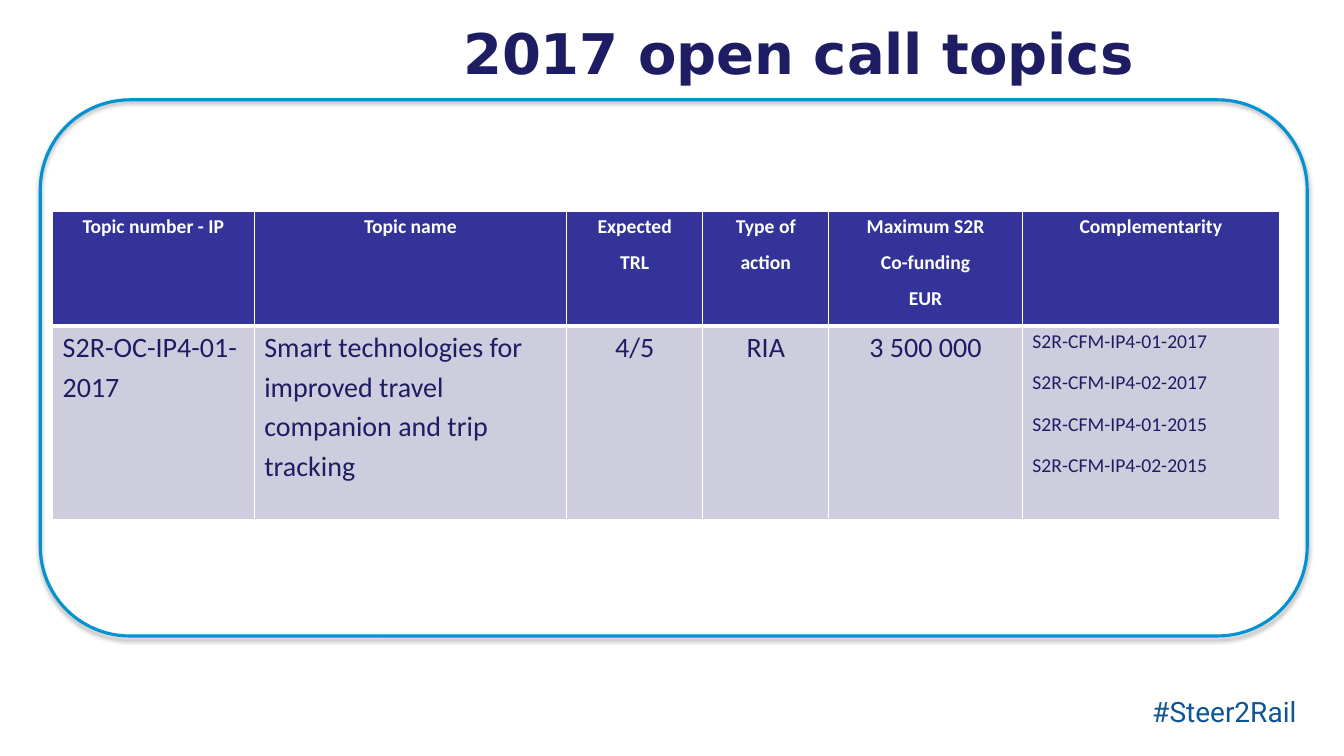
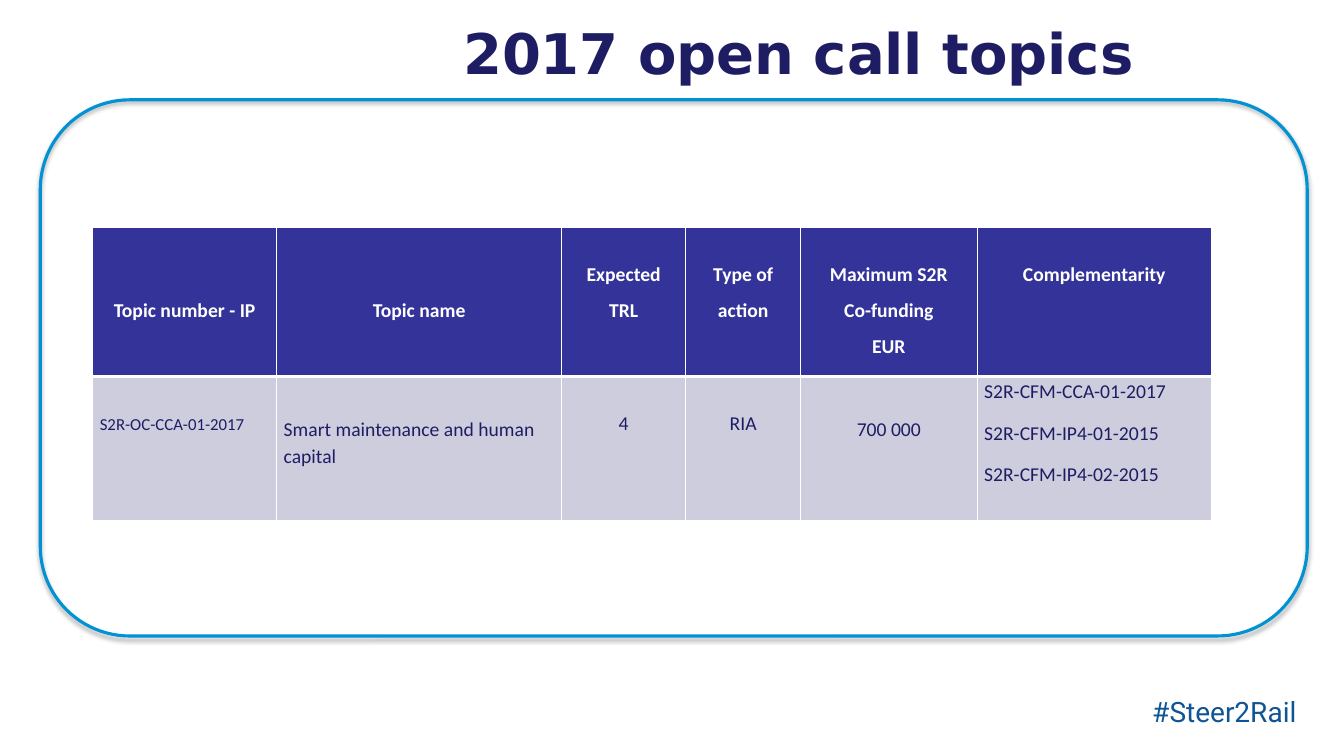
from dataclasses import dataclass
from lxml import etree
from pptx import Presentation
from pptx.dml.color import RGBColor
from pptx.enum.shapes import MSO_SHAPE
from pptx.enum.text import MSO_ANCHOR, MSO_AUTO_SIZE, PP_ALIGN
from pptx.oxml.ns import qn
from pptx.util import Pt

ROUNDED = MSO_SHAPE.ROUNDED_RECTANGLE
TOP = MSO_ANCHOR.TOP
NO_AUTOSIZE = MSO_AUTO_SIZE.NONE
LEFT, CENTER, RIGHT = PP_ALIGN.LEFT, PP_ALIGN.CENTER, PP_ALIGN.RIGHT
TITLE_ONLY = 5


@dataclass(frozen=True)
class Theme:
    navy: str = "1E1D64"
    frame: str = "0092D2"
    tag: str = "0F5494"
    header: str = "333399"
    body: str = "CDCDDE"
    white: str = "FFFFFF"
    shadow: str = "000000"
    title_font: str = "DejaVu Sans"
    table_font: str = "Calibri"
    tag_font: str = "Roboto"
    title_size: int = 40
    large: int = 20
    medium: int = 14
    small: int = 12


THEME = Theme()


@dataclass
class Entry:
    """Lines of one table cell, with their size and the gap above them."""
    lines: list
    align: PP_ALIGN = CENTER
    size: int = THEME.medium
    top: float = 0


class Deck:
    def __init__(self):
        self.presentation = Presentation()
        self.presentation.slide_width = Pt(960)
        self.presentation.slide_height = Pt(540)
        self.slide = None

    def new_slide(self, title):
        layout = self.presentation.slide_layouts[TITLE_ONLY]
        self.slide = self.presentation.slides.add_slide(layout)
        self.hashtag("#Steer2Rail")
        self.frame()
        self.title(title)

    def fill_text(self, text_frame, lines, align, color, spacing=None, **font_values):
        for index, line in enumerate(lines):
            paragraph = text_frame.paragraphs[0] if index == 0 else text_frame.add_paragraph()
            paragraph.alignment = align
            for name, value in (spacing or {}).items():
                setattr(paragraph, name, value)
            run = paragraph.add_run()
            run.text = line
            for name, value in font_values.items():
                setattr(run.font, name, value)
            run.font.color.rgb = RGBColor.from_string(color)

    def title(self, text):
        shape = self.slide.shapes.title
        shape.left, shape.top, shape.width, shape.height = Pt(219), Pt(9.4), Pt(598), Pt(55.4)
        text_frame = shape.text_frame
        text_frame.auto_size = NO_AUTOSIZE
        text_frame.vertical_anchor = TOP
        self.fill_text(text_frame, [text], RIGHT, THEME.navy, name=THEME.title_font,
                       size=Pt(THEME.title_size), bold=True)

    def hashtag(self, text):
        shape = self.slide.shapes.add_textbox(Pt(800.8), Pt(492.5), Pt(132.4), Pt(31.5))
        shape.text_frame.word_wrap = True
        self.fill_text(shape.text_frame, [text], RIGHT, THEME.tag,
                       name=THEME.tag_font, size=Pt(THEME.large))

    def frame(self):
        shape = self.slide.shapes.add_shape(ROUNDED, Pt(28.8), Pt(71.3), Pt(905), Pt(383))
        shape.adjustments[0] = 0.167
        shape.fill.background()
        shape.line.color.rgb = RGBColor.from_string(THEME.frame)
        shape.line.width = Pt(2.25)
        # Soft shadow straight below the outline
        shape.shadow.inherit = False
        effects = shape._element.spPr.find(qn("a:effectLst"))
        shadow = etree.SubElement(effects, qn("a:outerShdw"), blurRad=str(Pt(3.1)),
                                  dist=str(Pt(1.8)), dir="5400000", rotWithShape="0")
        color = etree.SubElement(shadow, qn("a:srgbClr"), val=THEME.shadow)
        etree.SubElement(color, qn("a:alpha"), val="35000")

    def borders(self, cell, top, bottom):
        properties = cell._tc.get_or_add_tcPr()
        for side, width in (("L", 1), ("R", 1), ("T", top), ("B", bottom)):
            line = etree.SubElement(properties, qn(f"a:ln{side}"), w=str(Pt(width)))
            fill = etree.SubElement(line, qn("a:solidFill"))
            etree.SubElement(fill, qn("a:srgbClr"), val=THEME.white)

    def table(self, left, top, width, heights, side_margin, rows):
        graphic = self.slide.shapes.add_table(len(rows), len(COLUMN_SHARES), Pt(left), Pt(top),
                                              Pt(width), Pt(sum(heights)))
        table = graphic.table
        table.horz_banding = False
        for column, share in zip(table.columns, COLUMN_SHARES):
            column.width = Pt(width * share / sum(COLUMN_SHARES))
        for row, height in zip(table.rows, heights):
            row.height = Pt(height)
        for row_index, entries in enumerate(rows):
            is_header = row_index == 0
            for column_index, entry in enumerate(entries):
                cell = table.cell(row_index, column_index)
                self.borders(cell, *((1, 3) if is_header else (3, 1)))
                cell.fill.solid()
                cell.fill.fore_color.rgb = RGBColor.from_string(
                    THEME.header if is_header else THEME.body)
                margins = {"left": side_margin, "right": side_margin,
                           "top": entry.top, "bottom": 0}
                for side, value in margins.items():
                    setattr(cell, f"margin_{side}", Pt(value))
                self.fill_text(cell.text_frame, entry.lines, entry.align,
                               THEME.white if is_header else THEME.navy,
                               {"line_spacing": 1.15, "space_after": Pt(6 if is_header else 10)},
                               name=THEME.table_font, size=Pt(entry.size), bold=is_header)


# Content shared by both tables
TITLE = "2017 open call topics"
COLUMN_SHARES = [2, 3.1, 1.35, 1.25, 1.92, 2.55]
HEADINGS = [["Topic number - IP"], ["Topic name"], ["Expected", "TRL"], ["Type of", "action"],
            ["Maximum S2R", "Co-funding", "EUR"], ["Complementarity"]]


def header_row(tops):
    return [Entry(lines, top=top) for lines, top in zip(HEADINGS, tops)]


def main():
    deck = Deck()

    # Travel companion topic
    deck.new_slide(TITLE)
    deck.table(37.6, 151, 876.4, [82, 138], 7.2, [
        header_row([0] * 6),
        [Entry(["S2R-OC-IP4-01-2017"], LEFT, THEME.large),
         Entry(["Smart technologies for improved travel companion and trip tracking"],
               LEFT, THEME.large),
         Entry(["4/5"], size=THEME.large),
         Entry(["RIA"], size=THEME.large),
         Entry(["3 500 000"], size=THEME.large),
         Entry(["S2R-CFM-IP4-01-2017", "S2R-CFM-IP4-02-2017",
                "S2R-CFM-IP4-01-2015", "S2R-CFM-IP4-02-2015"], LEFT)],
    ])

    # Maintenance and human capital topic
    deck.new_slide(TITLE)
    deck.table(66.3, 162.3, 799.2, [106.6, 102.8], 5, [
        header_row([48.7, 48.7, 23, 23, 23, 23]),
        [Entry(["S2R-OC-CCA-01-2017"], LEFT, THEME.small, 25),
         Entry(["Smart maintenance and human capital"], LEFT, top=27),
         Entry(["4"], top=23),
         Entry(["RIA"], top=23),
         Entry(["700 000"], top=27),
         Entry(["S2R-CFM-CCA-01-2017", "S2R-CFM-IP4-01-2015", "S2R-CFM-IP4-02-2015"], LEFT)],
    ])

    deck.presentation.save("out.pptx")


if __name__ == "__main__":
    main()
